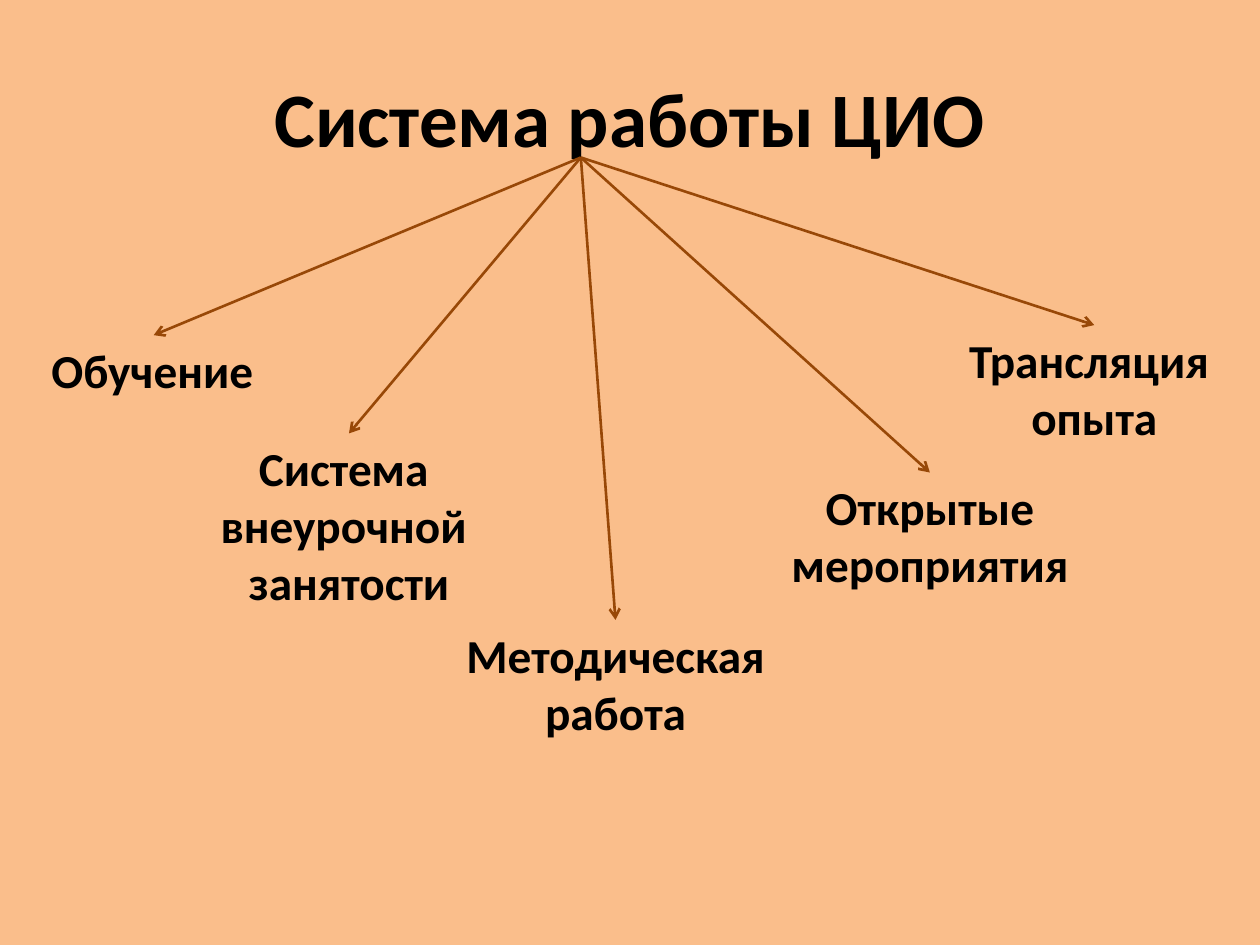
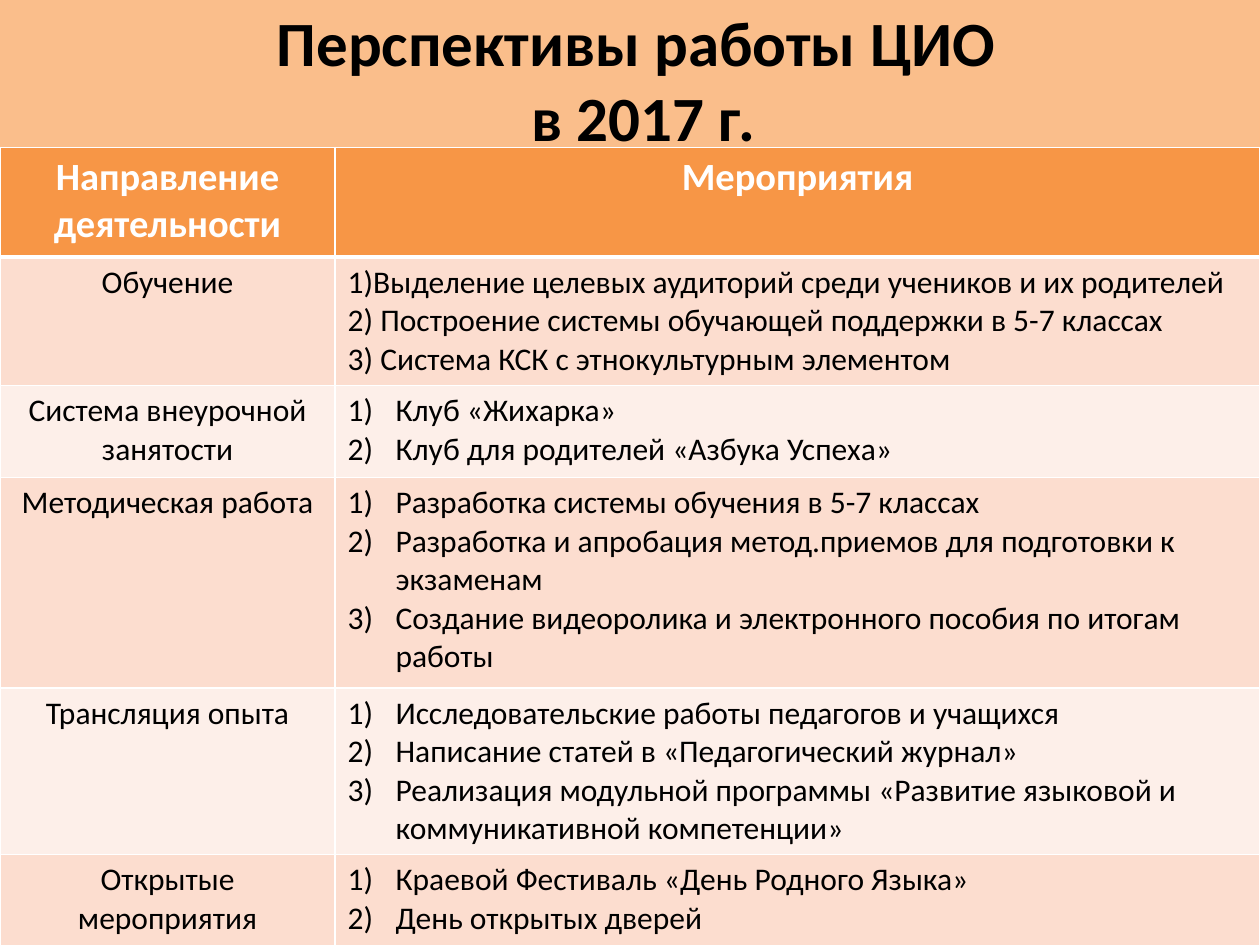
import pptx
import pptx.util
import pptx.dml.color
import pptx.enum.shapes
import pptx.enum.text
import pptx.oxml.ns
from lxml import etree

Inches, Pt = pptx.util.Inches, pptx.util.Pt
RGBColor = pptx.dml.color.RGBColor
PP_ALIGN = pptx.enum.text.PP_ALIGN
MSO_ANCHOR = pptx.enum.text.MSO_ANCHOR
MSO_AUTO_SIZE = pptx.enum.text.MSO_AUTO_SIZE
qn = pptx.oxml.ns.qn

FONT = "Calibri"
PEACH = RGBColor(0xFA, 0xBE, 0x8B)
BROWN = RGBColor(0x98, 0x48, 0x07)
ORANGE = RGBColor(0xF7, 0x96, 0x46)
BANDS = RGBColor(0xFC, 0xDD, 0xCF), RGBColor(0xFD, 0xEF, 0xE9)
BLACK = RGBColor(0, 0, 0)
WHITE = RGBColor(0xFF, 0xFF, 0xFF)

# Content: each direction is (lines, left, top, width, height)
SYSTEM_TITLE = ["Система работы ЦИО"]
HUB = 4.61, 1.25
DIRECTIONS = [
    (["Обучение"], 0.31, 2.66, 1.82, 0.56),
    (["Система ", "внеурочной ", "занятости"], 1.64, 3.44, 2.26, 1.46),
    (["Методическая", "работа"], 3.59, 4.92, 2.59, 1.01),
    (["Открытые", "мероприятия"], 6.17, 3.75, 2.42, 1.01),
    (["Трансляция ", "опыта"], 7.58, 2.58, 2.21, 1.01),
]

PLAN_TITLE = ["Перспективы работы ЦИО", " в 2017 г."]
PLAN_HEADER = ["Направление деятельности", "Мероприятия"]
# Each row is (direction, events, numbered automatically)
PLAN = [
    ("Обучение", [
        "1)Выделение целевых аудиторий среди учеников и их родителей",
        "2) Построение системы обучающей поддержки в 5-7 классах",
        "3) Система КСК с этнокультурным элементом"], False),
    ("Система внеурочной занятости", [
        "Клуб «Жихарка»",
        "Клуб для родителей «Азбука Успеха»"], True),
    ("Методическая работа", [
        "Разработка системы обучения в 5-7 классах",
        "Разработка и апробация метод.приемов для подготовки к экзаменам",
        "Создание видеоролика и электронного пособия по итогам работы"], True),
    ("Трансляция опыта", [
        "Исследовательские работы педагогов и учащихся",
        "Написание статей в «Педагогический журнал»",
        "Реализация модульной программы «Развитие языковой и "
        "коммуникативной компетенции»"], True),
    ("Открытые мероприятия", [
        "Краевой Фестиваль «День Родного Языка»",
        "День открытых дверей"], True),
]
COL_WIDTHS = [2.66, 7.34]
ROW_HEIGHTS = [0.87, 1.02, 0.73, 1.67, 1.31, 0.73]


def add_run(p, text, size, color=BLACK, bold=True):
    r = p.add_run()
    r.text = text
    r.font.name, r.font.size, r.font.bold = FONT, Pt(size), bold
    r.font.color.rgb = color


def add_paragraphs(tf, lines, size, align=None, numbered=False, **style):
    for i, line in enumerate(lines):
        p = tf.add_paragraph() if i else tf.paragraphs[0]
        if align is not None:
            p.alignment = align
        if numbered:
            pPr = p._p.get_or_add_pPr()
            pPr.set("marL", str(Inches(0.38)))
            pPr.set("indent", str(-Inches(0.38)))
            etree.SubElement(pPr, qn("a:buFont"), typeface="+mj-lt")
            etree.SubElement(pPr, qn("a:buAutoNum"), type="arabicParenR")
        add_run(p, line, size, **style)


def add_titled_slide(prs, lines, left, top, size):
    s = prs.slides.add_slide(prs.slide_layouts[5])
    sp = s.shapes.title
    sp.left, sp.top = Inches(left), Inches(top)
    sp.width, sp.height = Inches(9), Inches(1.25)
    tf = sp.text_frame
    tf.auto_size = MSO_AUTO_SIZE.NONE
    tf.vertical_anchor = MSO_ANCHOR.MIDDLE
    p = tf.paragraphs[0]
    p.alignment = PP_ALIGN.CENTER
    for i, line in enumerate(lines):
        if i:
            p.add_line_break()
        add_run(p, line, size)
    return s


def add_arrow(s, start, end):
    sp = s.shapes.add_connector(pptx.enum.shapes.MSO_CONNECTOR.STRAIGHT,
                                *map(Inches, start + end))
    sp.line.color.rgb, sp.line.width = BROWN, Pt(1.5)
    etree.SubElement(sp.line._get_or_add_ln(), qn("a:tailEnd"), type="arrow")
    etree.SubElement(sp._element.spPr, qn("a:effectLst"))


def add_direction(s, lines, left, top, width, height):
    sp = s.shapes.add_textbox(*map(Inches, (left, top, width, height)))
    tf = sp.text_frame
    tf.word_wrap = False
    tf.auto_size = MSO_AUTO_SIZE.SHAPE_TO_FIT_TEXT
    add_paragraphs(tf, lines, 27, PP_ALIGN.CENTER if len(lines) > 1 else None)
    add_arrow(s, HUB, (left + width / 2, top))


def style_cell(cell, fill, top=1, bottom=1):
    # Borders come before the fill in the cell properties
    tcPr = cell._tc.get_or_add_tcPr()
    for side, width in zip("LRTB", (1, 1, top, bottom)):
        ln = etree.SubElement(tcPr, qn(f"a:ln{side}"), w=str(Pt(width)))
        solid = etree.SubElement(ln, qn("a:solidFill"))
        etree.SubElement(solid, qn("a:srgbClr"), val=str(WHITE))
    cell.fill.solid()
    cell.fill.fore_color.rgb = fill


def add_plan_table(s):
    size = sum(COL_WIDTHS), sum(ROW_HEIGHTS)
    table = s.shapes.add_table(len(ROW_HEIGHTS), len(COL_WIDTHS),
                               *map(Inches, (0, 1.17) + size)).table
    for col, width in zip(table.columns, COL_WIDTHS):
        col.width = Inches(width)
    for row, height in zip(table.rows, ROW_HEIGHTS):
        row.height = Inches(height)

    # Header row
    for cell, text in zip(table.rows[0].cells, PLAN_HEADER):
        style_cell(cell, ORANGE, bottom=3)
        add_paragraphs(cell.text_frame, [text], 22, PP_ALIGN.CENTER, color=WHITE)

    # Banded body rows
    for i, (direction, events, numbered) in enumerate(PLAN):
        name, details = table.rows[i + 1].cells
        for cell in (name, details):
            style_cell(cell, BANDS[i % 2], top=1 if i else 3)
        add_paragraphs(name.text_frame, [direction], 18, PP_ALIGN.CENTER, bold=False)
        add_paragraphs(details.text_frame, events, 18, numbered=numbered, bold=False)


def main():
    prs = pptx.Presentation()
    prs.slide_width, prs.slide_height = Inches(10), Inches(7.5)
    background = prs.slide_master.background.fill
    background.solid()
    background.fore_color.rgb = PEACH

    # Slide 1: directions fanning out from the title
    s = add_titled_slide(prs, SYSTEM_TITLE, 0.5, 0.3, 44)
    for direction in DIRECTIONS:
        add_direction(s, *direction)

    # Slide 2: plan for the year
    s = add_titled_slide(prs, PLAN_TITLE, 0.55, 0, 36)
    add_plan_table(s)

    prs.save("out.pptx")


if __name__ == "__main__":
    main()
